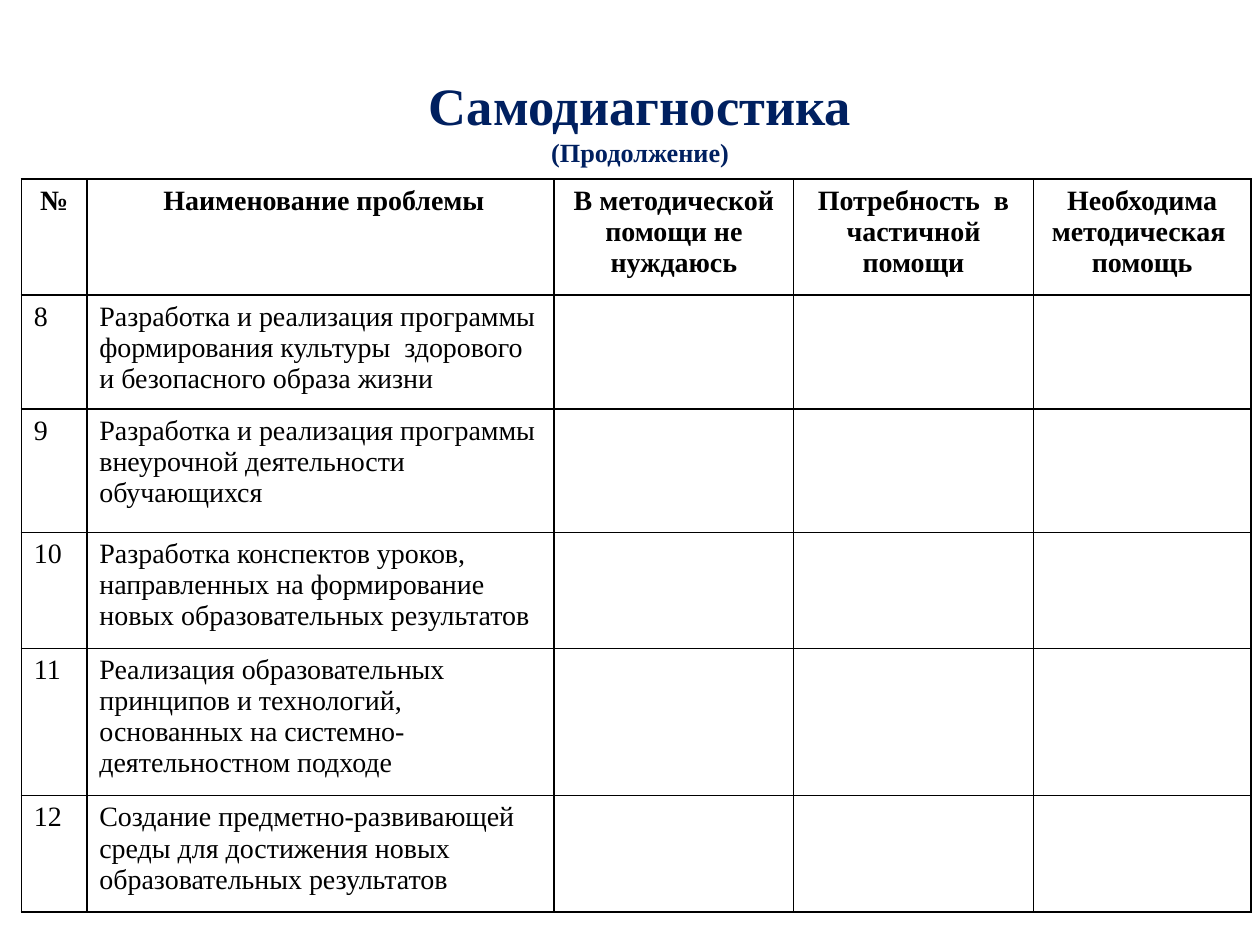
import pptx
import pptx.util
import pptx.dml.color
import pptx.enum.text
import pptx.oxml
import pptx.oxml.ns

Cm = pptx.util.Cm
ALIGN = pptx.enum.text.PP_ALIGN

TITLE = "Самодиагностика"
SUBTITLE = "(Продолжение)"
HEADINGS = [
    "№",
    " Наименование проблемы",
    "В методической помощи не нуждаюсь",
    "Потребность  в частичной помощи",
    "Необходима методическая  помощь",
]
FIRST_NUMBER = 8
PROBLEMS = [
    "Разработка и реализация программы формирования культуры  здорового и безопасного образа жизни",
    "Разработка и реализация программы внеурочной деятельности обучающихся",
    "Разработка конспектов уроков, направленных на формирование новых образовательных результатов",
    "Реализация образовательных принципов и технологий, основанных на системно-деятельностном подходе",
    "Создание предметно-развивающей среды для достижения новых образовательных результатов",
]
COLUMN_WIDTHS = [1.32, 9.42, 4.83, 4.83, 4.39]
ROW_HEIGHTS = [2.34, 2.29, 2.49, 2.34, 2.97, 2.34]

THEME = {
    "font": "Times New Roman",
    "title": "002060",
    "text": "000000",
    "border": "000000",
    "paper": "FFFFFF",
    "title_size": 30,
    "subtitle_size": 15,
    "table_size": 16,
    "border_width": 1,
}


def color(name):
    return pptx.dml.color.RGBColor.from_string(THEME[name])


def add_text(para, text, size="table_size", fill="text", bold=False, align=ALIGN.LEFT):
    para.alignment = align
    span = para.add_run()
    span.text = text
    span.font.name = THEME["font"]
    span.font.size = pptx.util.Pt(THEME[size])
    span.font.bold = bold
    span.font.color.rgb = color(fill)


def style_cell(cell):
    properties = cell._tc.get_or_add_tcPr()
    width = pptx.util.Pt(THEME["border_width"])
    for side in ("lnL", "lnR", "lnT", "lnB"):
        properties.append(pptx.oxml.parse_xml(
            f'<a:{side} {pptx.oxml.ns.nsdecls("a")} w="{width}"><a:solidFill>'
            f'<a:srgbClr val="{THEME["border"]}"/></a:solidFill></a:{side}>'
        ))
    cell.fill.solid()
    cell.fill.fore_color.rgb = color("paper")


def add_title(page):
    box = page.shapes.title
    box.left, box.top, box.width, box.height = Cm(0.84), Cm(1.47), Cm(24.13), Cm(1.9)
    frame = box.text_frame
    frame.word_wrap = True
    frame.auto_size = pptx.enum.text.MSO_AUTO_SIZE.NONE
    frame.vertical_anchor = pptx.enum.text.MSO_ANCHOR.MIDDLE
    para = frame.paragraphs[0]
    heading = {"fill": "title", "bold": True, "align": ALIGN.CENTER}
    add_text(para, TITLE, size="title_size", **heading)
    para.add_line_break()
    add_text(para, SUBTITLE, size="subtitle_size", **heading)


def add_problem_table(page):
    rows = [HEADINGS] + [
        [str(number), problem, "", "", ""]
        for number, problem in enumerate(PROBLEMS, FIRST_NUMBER)
    ]
    table = page.shapes.add_table(
        len(rows), len(HEADINGS), Cm(0.43), Cm(3.61),
        Cm(sum(COLUMN_WIDTHS)), Cm(sum(ROW_HEIGHTS)),
    ).table
    table.horz_banding = False
    for column, width in zip(table.columns, COLUMN_WIDTHS):
        column.width = Cm(width)
    for row, height in zip(table.rows, ROW_HEIGHTS):
        row.height = Cm(height)
    for row_index, texts in enumerate(rows):
        is_header = row_index == 0
        for column_index, text in enumerate(texts):
            cell = table.cell(row_index, column_index)
            style_cell(cell)
            if text:
                add_text(
                    cell.text_frame.paragraphs[0], text, bold=is_header,
                    align=ALIGN.CENTER if is_header else ALIGN.LEFT,
                )


def main():
    deck = pptx.Presentation()
    deck.slide_width, deck.slide_height = Cm(25.4), Cm(19.05)
    page = deck.slides.add_slide(deck.slide_layouts[5])
    add_title(page)
    add_problem_table(page)
    deck.save("out.pptx")


if __name__ == "__main__":
    main()
